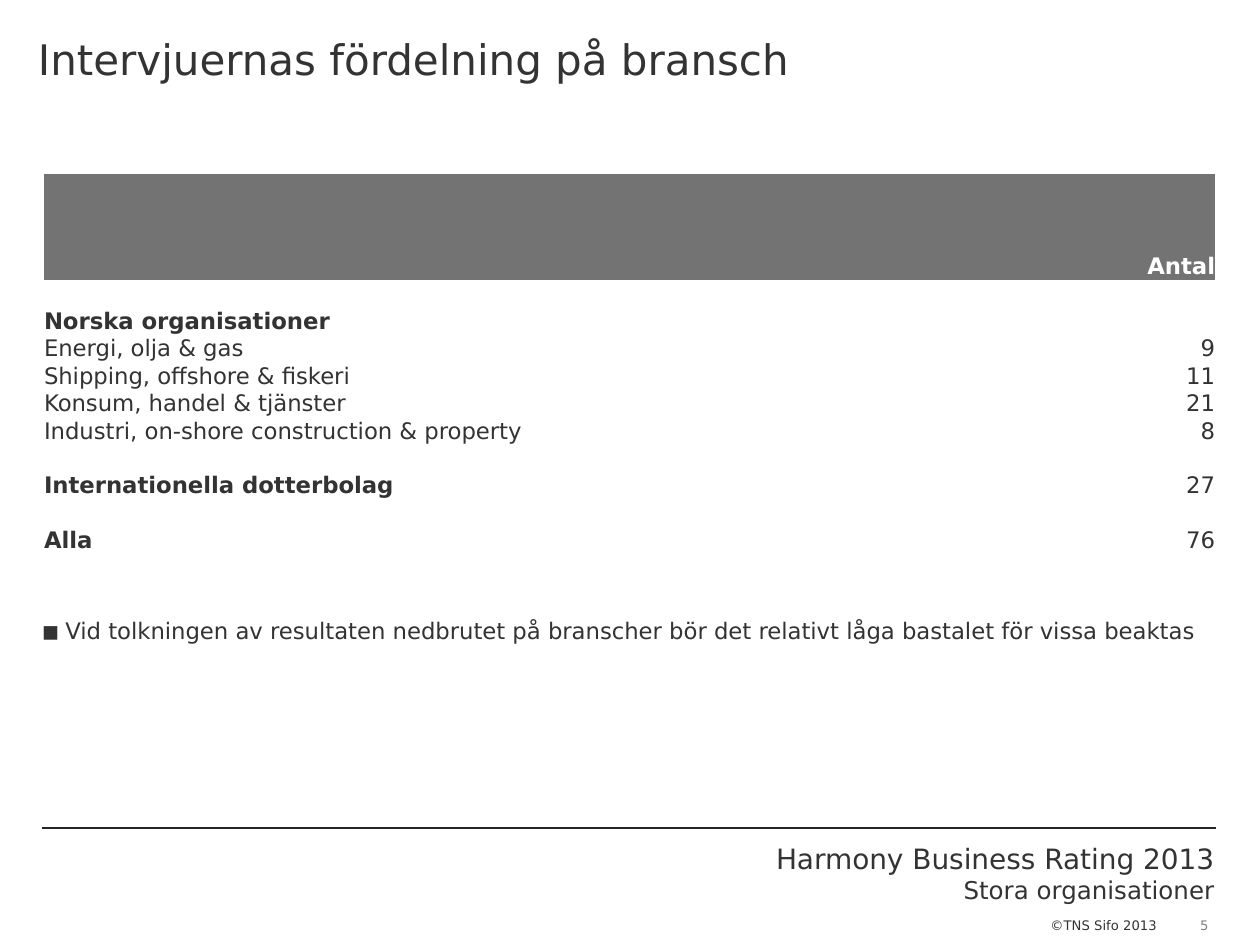
from dataclasses import dataclass

from lxml.etree import SubElement
from pptx import Presentation
from pptx.dml.color import RGBColor
from pptx.enum.shapes import MSO_CONNECTOR
from pptx.enum.text import MSO_ANCHOR, PP_ALIGN
from pptx.oxml.ns import qn
from pptx.util import Emu, Pt

PX = 914400 / 126
NO_STYLE = "{2D5ABB26-0587-4C30-8999-92F81FD0307C}"


@dataclass(frozen=True)
class Theme:
    """Colours, font and type sizes of the slide."""
    font: str = "DejaVu Sans"
    ink: str = "333333"
    rule: str = "262626"
    muted: str = "808080"
    header: str = "737373"
    white: str = "FFFFFF"
    title: float = 24
    project: float = 16
    subtitle: float = 14
    body: float = 13
    small: float = 7.5


THEME = Theme()
ROWS = [
    ("", "", False),
    ("Norska organisationer", "", True),
    ("Energi, olja & gas", "9", False),
    ("Shipping, offshore & fiskeri", "11", False),
    ("Konsum, handel & tjänster", "21", False),
    ("Industri, on-shore construction & property", "8", False),
    ("", "", False),
    ("Internationella dotterbolag", "27", True),
    ("", "", False),
    ("Alla", "76", True),
]


def px(value):
    """Turn px into EMU."""
    return Emu(round(value * PX))


def write(para, text, size=THEME.body, color=THEME.ink, bold=False, align=PP_ALIGN.LEFT):
    """Fill one paragraph with formatted text."""
    para.alignment = align
    if not text:
        para._p.get_or_add_endParaRPr().set("sz", str(int(size * 100)))
        return
    span = para.add_run()
    span.text = text
    span.font.name = THEME.font
    span.font.size = Pt(size)
    span.font.bold = bold
    span.font.color.rgb = RGBColor.from_string(color)


def set_margins(target, margins):
    """Set left, top, right and bottom margins of a frame or cell."""
    names = ("margin_left", "margin_top", "margin_right", "margin_bottom")
    for name, value in zip(names, margins):
        setattr(target, name, px(value))


def add_frame(page, box, margins=None, wrap=True):
    """Add a text box and return its frame."""
    frame = page.shapes.add_textbox(*map(px, box)).text_frame
    frame.word_wrap = wrap
    if margins:
        set_margins(frame, margins)
    return frame


def add_title(page, box):
    """Place the slide title."""
    frame = add_frame(page, box, (38, 33, 38, 0))
    write(frame.paragraphs[0], "Intervjuernas fördelning på bransch", size=THEME.title)


def fill_cell(cell, text, fill=None, top=0, **style):
    """Format one table cell and write its text."""
    set_margins(cell, (0, top, 0, 0))
    cell.vertical_anchor = MSO_ANCHOR.BOTTOM
    if fill:
        cell.fill.solid()
        cell.fill.fore_color.rgb = RGBColor.from_string(fill)
    else:
        cell.fill.background()
    write(cell.text_frame.paragraphs[0], text, **style)


def add_counts(page, box, header=106, count_width=222):
    """Place the table of interview counts."""
    left, top, width, height = box
    frame = page.shapes.add_table(len(ROWS) + 1, 2, *map(px, box))
    table = frame.table
    table.first_row = table.horz_banding = False
    table._tbl.tblPr.find(qn("a:tableStyleId")).text = NO_STYLE
    table.columns[0].width = px(width - count_width)
    table.columns[1].width = px(count_width)
    for index, row in enumerate(table.rows):
        row.height = px((height - header) / len(ROWS) if index else header)
    fill_cell(table.cell(0, 0), "", fill=THEME.header)
    fill_cell(table.cell(0, 1), "Antal", fill=THEME.header, top=25,
              color=THEME.white, bold=True, align=PP_ALIGN.RIGHT)
    for index, (label, count, bold) in enumerate(ROWS, 1):
        fill_cell(table.cell(index, 0), label, bold=bold)
        fill_cell(table.cell(index, 1), count, align=PP_ALIGN.RIGHT)


def add_note(page, box, indent=24):
    """Place the bulleted note."""
    para = add_frame(page, box).paragraphs[0]
    properties = para._p.get_or_add_pPr()
    properties.set("marL", str(px(indent)))
    properties.set("indent", str(-px(indent)))
    color = SubElement(properties, qn("a:buClr"))
    SubElement(color, qn("a:srgbClr"), val=THEME.ink)
    SubElement(properties, qn("a:buSzPct"), val="120000")
    SubElement(properties, qn("a:buFont"), typeface=THEME.font)
    SubElement(properties, qn("a:buChar"), char="▪")
    write(para, "Vid tolkningen av resultaten nedbrutet på branscher bör det "
                "relativt låga bastalet för vissa beaktas")


def add_footer(page, box):
    """Place the rule, project name, copyright line and page number."""
    left, top, width, height = box
    right = left + width
    line = page.shapes.add_connector(
        MSO_CONNECTOR.STRAIGHT, px(left), px(top), px(right), px(top))
    line.line.color.rgb = RGBColor.from_string(THEME.rule)
    line.line.width = Pt(0.75)
    SubElement(line._element.spPr, qn("a:effectLst"))

    project = add_frame(page, (right - 566, top + 7, 577, 77))
    write(project.paragraphs[0], "Harmony Business Rating 2013",
          size=THEME.project, align=PP_ALIGN.RIGHT)
    write(project.add_paragraph(), "Stora organisationer",
          size=THEME.subtitle, align=PP_ALIGN.RIGHT)

    rights = add_frame(page, (right - 178, top + 83, 139, 29))
    write(rights.paragraphs[0], "©TNS Sifo 2013", size=THEME.small)

    number = add_frame(page, (right - 23, top + 89, 23, 16), (0, 0, 0, 0), wrap=False)
    write(number.paragraphs[0], "5", size=THEME.small,
          color=THEME.muted, align=PP_ALIGN.CENTER)


def main():
    """Build and save the deck."""
    deck = Presentation()
    deck.slide_width, deck.slide_height = px(1260), px(945)
    page = deck.slides.add_slide(deck.slide_layouts[6])
    add_footer(page, (42, 828, 1174, 117))
    add_title(page, (0, 0, 1260, 146))
    add_counts(page, (44, 174, 1171, 379))
    add_note(page, (29, 611, 1186, 40))
    deck.save("out.pptx")


if __name__ == "__main__":
    main()
